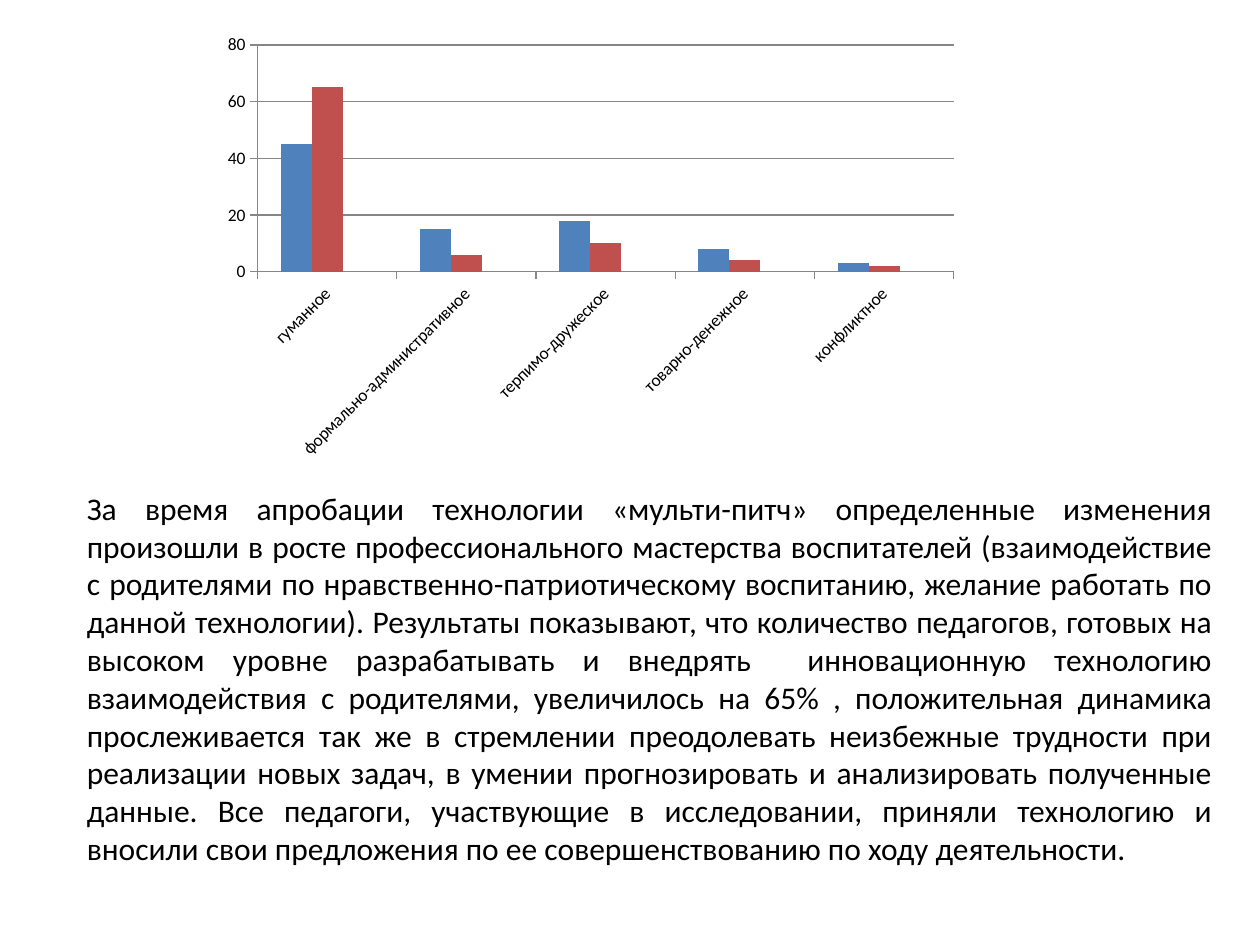
from dataclasses import dataclass

from pptx import Presentation
from pptx import util as u
from pptx.chart.data import CategoryChartData
from pptx.dml.color import RGBColor
from pptx.enum import chart as ch
from pptx.enum import text


@dataclass(frozen=True)
class Theme:
    font: str = "Calibri"
    ink: str = "000000"
    grid: str = "868686"
    series: tuple = ("4F81BD", "C0504D", "9BBB59")
    body_size: int = 18
    chart_size: int = 10


CATEGORIES = ["гуманное", "формально-административное", "терпимо-дружеское",
              "товарно-денежное", "конфликтное"]
SERIES = {
    "Series 1": [45, 15, 18, 8, 3],
    "Series 2": [65, 6, 10, 4, 2],
    "Series 3": [None] * len(CATEGORIES),  # empty series keeps its slot in each group
}
SUMMARY = (
    "За время апробации технологии «мульти-питч» определенные изменения произошли "
    "в росте профессионального мастерства воспитателей (взаимодействие с родителями "
    "по нравственно-патриотическому воспитанию, желание работать по данной технологии). "
    "Результаты показывают, что количество педагогов, готовых на высоком уровне "
    "разрабатывать и внедрять  инновационную технологию взаимодействия с родителями, "
    "увеличилось на 65% , положительная динамика прослеживается так же в стремлении "
    "преодолевать неизбежные трудности при реализации новых задач, в умении "
    "прогнозировать и анализировать полученные данные. Все педагоги, участвующие в "
    "исследовании, приняли технологию и вносили свои предложения по ее "
    "совершенствованию по ходу деятельности."
)


def style_font(font, name, size, color):
    font.name = name
    font.size = u.Pt(size)
    font.color.rgb = RGBColor.from_string(color)


def add_text(tf, content, *, font, size, color, align):
    p = tf.paragraphs[0]
    p.alignment = align
    r = p.add_run()
    r.text = content
    style_font(r.font, font, size, color)


class SlideBuilder:
    def __init__(self, s, theme):
        self.s = s
        self.theme = theme

    def paragraph(self, content, left, top, width, height):
        sp = self.s.shapes.add_textbox(u.Cm(left), u.Cm(top), u.Cm(width), u.Cm(height))
        tf = sp.text_frame
        tf.word_wrap = True
        tf.auto_size = text.MSO_AUTO_SIZE.SHAPE_TO_FIT_TEXT
        add_text(tf, content, font=self.theme.font, size=self.theme.body_size,
                 color=self.theme.ink, align=text.PP_ALIGN.JUSTIFY)

    def column_chart(self, categories, series, left, top, width, height):
        data = CategoryChartData()
        data.categories = categories
        for name, values in series.items():
            data.add_series(name, values)
        chart = self.s.shapes.add_chart(
            ch.XL_CHART_TYPE.COLUMN_CLUSTERED,
            u.Cm(left), u.Cm(top), u.Cm(width), u.Cm(height), data).chart
        chart.has_legend = chart.has_title = False
        style_font(chart.font, self.theme.font, self.theme.chart_size, self.theme.ink)

        # Columns
        plot = chart.plots[0]
        plot.vary_by_categories = False
        plot.gap_width, plot.overlap = 150, 0
        for ser, color in zip(plot.series, self.theme.series):
            ser.format.fill.solid()
            ser.format.fill.fore_color.rgb = RGBColor.from_string(color)

        # Axes and gridlines
        cat, val = chart.category_axis, chart.value_axis
        val.minimum_scale, val.maximum_scale, val.major_unit = 0, 80, 20
        val.has_major_gridlines = True
        for axis in (cat, val):
            axis.major_tick_mark = ch.XL_TICK_MARK.OUTSIDE
            axis.minor_tick_mark = ch.XL_TICK_MARK.NONE
            style_font(axis.tick_labels.font, self.theme.font,
                       self.theme.chart_size, self.theme.ink)
        for line in (cat.format.line, val.format.line, val.major_gridlines.format.line):
            line.color.rgb = RGBColor.from_string(self.theme.grid)
            line.width = u.Pt(0.75)

        # Category labels slant upwards at 45 degrees
        body = cat.tick_labels.font._element.xpath("ancestor::c:txPr/a:bodyPr")[0]
        body.set("rot", str(-45 * 60000))
        body.set("vert", "horz")


def main():
    prs = Presentation()
    prs.slide_width, prs.slide_height = u.Cm(25.4), u.Cm(19.05)
    s = prs.slides.add_slide(prs.slide_layouts[6])
    builder = SlideBuilder(s, Theme())

    # Summary below, chart above
    builder.paragraph(SUMMARY, 1.5, 9.73, 23.19, 8.71)
    builder.column_chart(CATEGORIES, SERIES, 4.29, 0.53, 15.24, 8.89)

    prs.save("out.pptx")


if __name__ == "__main__":
    main()
